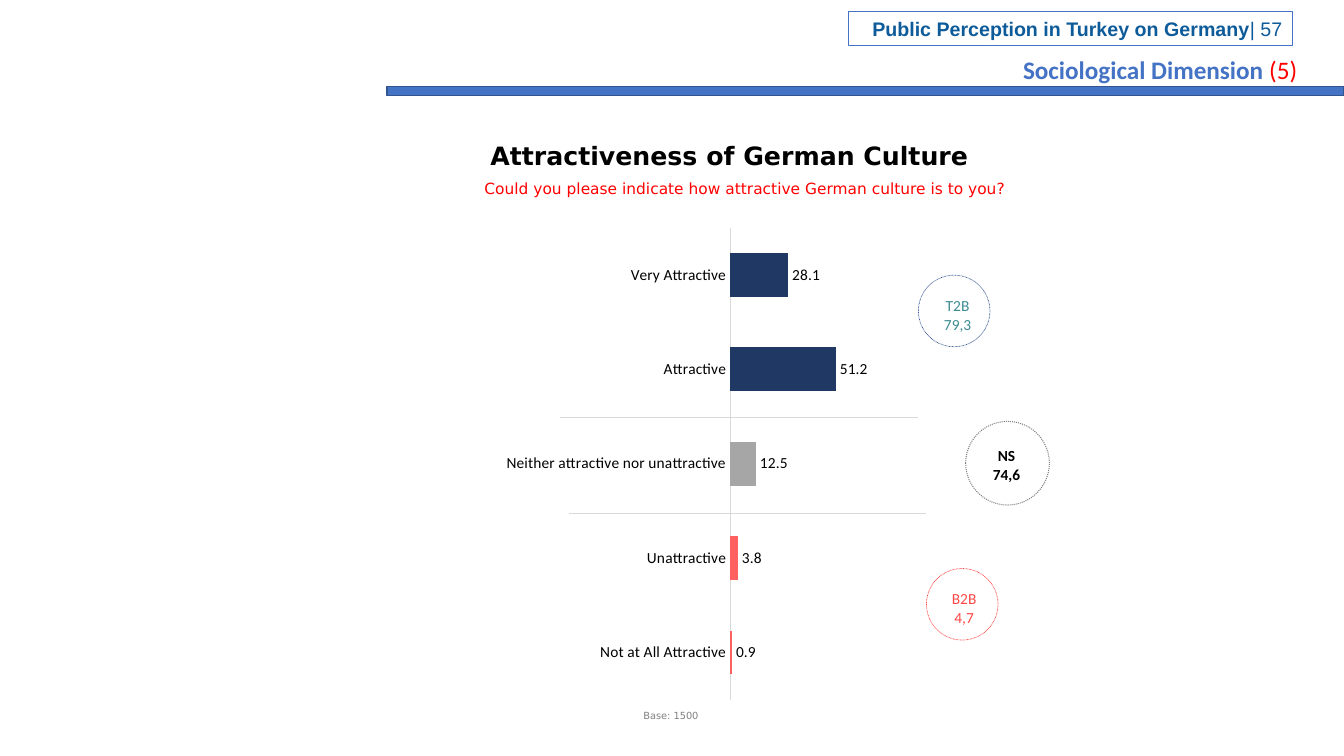
from lxml import etree
from pptx import Presentation
from pptx.chart.data import CategoryChartData
from pptx.dml.color import RGBColor
from pptx.enum.chart import XL_CHART_TYPE, XL_LABEL_POSITION, XL_TICK_LABEL_POSITION, XL_TICK_MARK
from pptx.enum.dml import MSO_LINE
from pptx.enum.shapes import MSO_CONNECTOR, MSO_SHAPE
from pptx.enum.text import MSO_ANCHOR, MSO_AUTO_SIZE, PP_ALIGN
from pptx.oxml import parse_xml
from pptx.oxml.ns import nsdecls, qn
from pptx.util import Inches, Pt

RECTANGLE, OVAL = MSO_SHAPE.RECTANGLE, MSO_SHAPE.OVAL
SOLID, DOTTED = MSO_LINE.SOLID, MSO_LINE.ROUND_DOT
LEFT, CENTER, RIGHT = PP_ALIGN.LEFT, PP_ALIGN.CENTER, PP_ALIGN.RIGHT
NO_TICK = XL_TICK_MARK.NONE
BLUE, NAVY, RED, CORAL = "4472C4", "203864", "FF0000", "FF6161"
BLACK, GRAY, PALE_GRAY = "000000", "808080", "D9D9D9"
color = RGBColor.from_string

presentation = Presentation()
presentation.slide_width, presentation.slide_height = Inches(13.33), Inches(7.5)
COLUMN, ROW = presentation.slide_width / 100, presentation.slide_height / 100
slide = presentation.slides.add_slide(presentation.slide_layouts[6])


def place(*shares):
    return [int(share * unit) for share, unit in zip(shares, (COLUMN, ROW) * 2)]


def write(shape, paragraphs, alignment, wrap=True):
    frame = shape.text_frame
    frame.word_wrap = wrap
    frame.auto_size = MSO_AUTO_SIZE.SHAPE_TO_FIT_TEXT
    for index, runs in enumerate(paragraphs):
        paragraph = frame.paragraphs[0] if index == 0 else frame.add_paragraph()
        paragraph.alignment = alignment
        for text, font, size, bold, shade in runs:
            run = paragraph.add_run()
            run.text = text
            for name, value in dict(name=font, size=Pt(size), bold=bold).items():
                setattr(run.font, name, value)
            run.font.color.rgb = color(shade)
    return frame


outlines = [
    (RECTANGLE, (28.8, 11.47, 71.2, 1.2), BLUE, "325491", 1, SOLID),
    (OVAL, (71.85, 55.73, 6.23, 11.07), None, GRAY, 0.75, DOTTED),
    (OVAL, (68.33, 36.4, 5.33, 9.47), None, "325491", 0.5, DOTTED),
    (OVAL, (68.93, 75.2, 5.33, 9.47), None, "FF4747", 0.5, DOTTED),
    (RECTANGLE, (63.15, 1.47, 33, 4.53), None, BLUE, 0.75, SOLID),
]
for kind, box, fill, line, width, dash in outlines:
    shape = slide.shapes.add_shape(kind, *place(*box))
    shape.shadow.inherit = False
    if fill:
        shape.fill.solid()
        shape.fill.fore_color.rgb = color(fill)
    else:
        shape.fill.background()
    shape.line.color.rgb = color(line)
    shape.line.width = Pt(width)
    shape.line.dash_style = dash

header = write(shape, [[
    ("Public Perception in Turkey on Germany", "Arial", 14, True, "0E5B9A"),
    ("| 57", "Arial", 14, False, "0E5B9A"),
]], RIGHT)
header.vertical_anchor = MSO_ANCHOR.MIDDLE

chart_data = CategoryChartData(number_format="0.0")
chart_data.categories = [
    "Not at All Attractive", "Unattractive", "Neither attractive nor unattractive",
    "Attractive", "Very Attractive",
]
chart_data.add_series("Series 1", (0.9, 3.8, 12.5, 51.2, 28.1))
chart = slide.shapes.add_chart(
    XL_CHART_TYPE.BAR_CLUSTERED, *place(36.98, 29.07, 35.78, 65.6), chart_data).chart
chart.has_legend = chart.has_title = False
chart.font.name, chart.font.size = "Calibri", Pt(11)
chart.font.color.rgb = color(BLACK)

category_axis, value_axis = chart.category_axis, chart.value_axis
category_axis.major_tick_mark = category_axis.minor_tick_mark = NO_TICK
category_axis.tick_label_position = XL_TICK_LABEL_POSITION.NEXT_TO_AXIS
category_axis.format.line.color.rgb = color(PALE_GRAY)
category_axis.format.line.width = Pt(0.75)
value_formats = dict(
    visible=False, minimum_scale=0, maximum_scale=120, has_major_gridlines=False)
for name, value in value_formats.items():
    setattr(value_axis, name, value)

plot = chart.plots[0]
plot.gap_width = 115
plot.vary_by_categories = False
plot.has_data_labels = True
label_formats = dict(
    show_value=True, number_format="0.0", number_format_is_linked=False,
    position=XL_LABEL_POSITION.OUTSIDE_END)
for name, value in label_formats.items():
    setattr(plot.data_labels, name, value)
series = plot.series[0]
series.format.fill.solid()
series.format.fill.fore_color.rgb = color("2F5597")
for index, shade in enumerate((CORAL, CORAL, "A6A6A6", NAVY, NAVY)):
    fill = series.points[index].format.fill
    fill.solid()
    fill.fore_color.rgb = color(shade)

plot_area = chart.element.find(".//" + qn("c:plotArea"))
for layout in plot_area.findall(qn("c:layout")):
    plot_area.remove(layout)
layout = parse_xml(f"<c:layout {nsdecls('c')}><c:manualLayout/></c:layout>")
for tag, value in (
    ("layoutTarget", "inner"), ("xMode", "edge"), ("yMode", "edge"),
    ("x", "0.485"), ("y", "0.016"), ("w", "0.515"), ("h", "0.952"),
):
    etree.SubElement(layout[0], qn("c:" + tag)).set("val", value)
plot_area.insert(0, layout)

for left, top in ((42.3, 67.87), (41.7, 55.2)):
    divider = slide.shapes.add_connector(
        MSO_CONNECTOR.STRAIGHT, *place(left, top, left + 26.63, top))
    divider.line.color.rgb = color(PALE_GRAY)
    divider.line.width = Pt(0.75)
    etree.SubElement(divider.element.spPr, qn("a:effectLst"))

scores = [
    ((71.4, 58.4, 6.98, 6.27), ("NS", "74,6"), True, BLACK),
    ((69.45, 38.53, 3.6, 6.27), ("T2B", "79,3"), False, "3C8C93"),
    ((70.05, 77.33, 3.38, 6.27), ("B2B", "4,7"), False, "FF4747"),
]
for box, lines, bold, shade in scores:
    write(slide.shapes.add_textbox(*place(*box)),
          [[(line, "Calibri", 11, bold, shade)] for line in lines], CENTER, wrap=bold)

captions = [
    ((22.8, 17.87, 62.93, 5.33), CENTER, 0, 0,
     [("Attractiveness of German Culture", "DejaVu Sans", 18, True, BLACK)]),
    ((21.68, 23.07, 67.88, 3.87), CENTER, 6, 3,
     [("Could you please indicate how attractive German culture is to you? ",
       "DejaVu Sans", 11, False, RED)]),
    ((75.38, 6.53, 22.13, 5.33), LEFT, 0, 0,
     [("Sociological Dimension ", "Calibri", 18, True, BLUE),
      ("(5)", "Calibri", 18, False, RED)]),
    ((46.88, 93.2, 6.08, 2.93), CENTER, 0, 0,
     [("Base: 1500", "DejaVu Sans", 7, False, GRAY)]),
]
for box, alignment, before, after, runs in captions:
    frame = write(slide.shapes.add_textbox(*place(*box)), [runs], alignment)
    frame.paragraphs[0].space_before = Pt(before)
    frame.paragraphs[0].space_after = Pt(after)

presentation.save("out.pptx")
